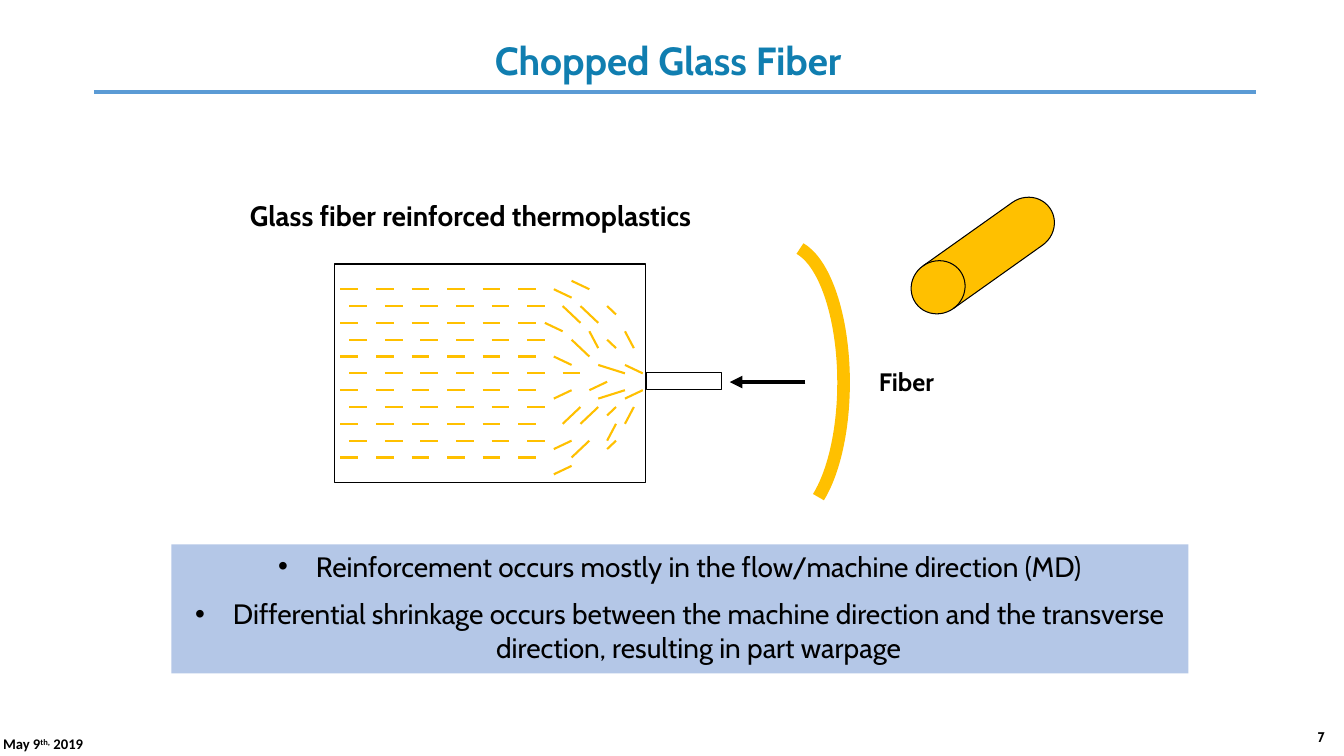
from lxml import etree
from pptx import Presentation
from pptx.dml.color import RGBColor
from pptx.enum import shapes, text
from pptx.oxml import ns
from pptx.util import Pt

# Content
TITLE = "Chopped Glass Fiber"
SUBTITLE = "Glass fiber reinforced thermoplastics"
POINTS = [
    "Reinforcement occurs mostly in the flow/machine direction (MD)",
    "Differential shrinkage occurs between the machine direction and the "
    "transverse direction, resulting in part warpage",
]
DATE = [("May 9", 0), ("th,", 30000), (" 2019", 0)]

COLORS = {"title": "107EB0", "rule": "5B9BD5", "panel": "B4C7E7",
          "fiber": "FFC000", "ink": "000000", "paper": "FFFFFF"}

# Fiber grid: origin and unit in points; aligned rows alternate by one unit
GRID_X, GRID_Y, UNIT_X, UNIT_Y = 243.2, 206.6, 6.35, 6.01
ROWS, DASHES, DASH, STEP = 11, 6, 2, 4

# Turning fibers near the gate, in grid units: x1, y1, x2, y2
TURNING = [
    (24, 0, 26, 1), (27, 2, 29, 4), (30, 6, 31, 7), (32, 9, 34, 10),
    (32, 5, 33, 7), (30, 2, 31, 3), (26, -1, 28, 0), (25, 2, 27, 4),
    (28, 5, 29, 7), (23, 4, 25, 5), (26, 6, 28, 8), (29, 9, 32, 10),
    (25, 10, 27, 10), (24, 8, 26, 9), (24, 13, 26, 12), (27, 16, 29, 14),
    (30, 19, 31, 18), (32, 13, 34, 12), (32, 16, 33, 14), (30, 15, 31, 14),
    (28, 12, 30, 11), (25, 16, 27, 14), (30, 18, 31, 16), (24, 19, 26, 18),
    (26, 20, 28, 18), (29, 13, 32, 12), (24, 22, 26, 21),
]

ALIGN, ANCHOR = text.PP_ALIGN, text.MSO_ANCHOR
SHAPE = shapes.MSO_SHAPE


def rgb(name):
    return RGBColor.from_string(COLORS[name])


def set_all(target, values):
    for key, value in values.items():
        setattr(target, key, value)


def add_run(p, words, size, color="ink", bold=True, font="Cabin"):
    r = p.add_run()
    r.text = words
    set_all(r.font, {"name": font, "size": Pt(size), "bold": bold})
    r.font.color.rgb = rgb(color)
    return r


def add_line(parent, x1, y1, x2, y2, color, width):
    line = parent.add_connector(shapes.MSO_CONNECTOR.STRAIGHT,
                                Pt(x1), Pt(y1), Pt(x2), Pt(y2))
    line.line.color.rgb = rgb(color)
    line.line.width = Pt(width)
    etree.SubElement(line._element.spPr, ns.qn("a:effectLst"))
    return line


def add_shape(kind, box, fill=None, line=None, width=0.75):
    sp = s.shapes.add_shape(kind, *map(Pt, box))
    sp.shadow.inherit = False
    if fill:
        sp.fill.solid()
        sp.fill.fore_color.rgb = rgb(fill)
    else:
        sp.fill.background()
    if line:
        sp.line.color.rgb = rgb(line)
        sp.line.width = Pt(width)
    else:
        sp.line.fill.background()
    return sp


def add_text(box, align=ALIGN.LEFT, anchor=ANCHOR.TOP, **margins):
    tf = s.shapes.add_textbox(*map(Pt, box)).text_frame
    set_all(tf, {"word_wrap": True, "vertical_anchor": anchor, **margins})
    tf.paragraphs[0].alignment = align
    return tf.paragraphs[0]


prs = Presentation()
prs.slide_width, prs.slide_height = Pt(960), Pt(540)
s = prs.slides.add_slide(prs.slide_layouts[5])

# Title and rule
title = s.shapes.title
set_all(title, {"left": Pt(180.2), "top": Pt(22.3),
                "width": Pt(594), "height": Pt(41)})
set_all(title.text_frame, {"vertical_anchor": ANCHOR.MIDDLE, "word_wrap": True,
                           "auto_size": text.MSO_AUTO_SIZE.NONE})
p = title.text_frame.paragraphs[0]
p.alignment = ALIGN.CENTER
add_run(p, TITLE, 28, "title")
add_line(s.shapes, 67, 65.5, 897, 65.5, "rule", 3)

# Mold, gate and flow arrow
add_shape(SHAPE.RECTANGLE, (461.5, 266.4, 54, 12.2), "paper", "ink")
add_shape(SHAPE.RECTANGLE, (239.3, 188.6, 222, 156.2), None, "ink")
arrow = add_line(s.shapes, 575.3, 272.9, 521.3, 272.9, "ink", 3)
etree.SubElement(arrow.line._get_or_add_ln(), ns.qn("a:tailEnd"), type="triangle")

# Fibers: aligned rows, then those turning at the gate
aligned = [(row % 2 + STEP * i, 2 * row, row % 2 + STEP * i + DASH, 2 * row)
           for row in range(ROWS) for i in range(DASHES)]
fibers = s.shapes.add_group_shape()
for x1, y1, x2, y2 in aligned + TURNING:
    add_line(fibers.shapes, GRID_X + x1 * UNIT_X, GRID_Y + y1 * UNIT_Y,
             GRID_X + x2 * UNIT_X, GRID_Y + y2 * UNIT_Y, "fiber", 1.5)

# Single fiber: cylinder, curved strand and label
cylinder = add_shape(SHAPE.FLOWCHART_MAGNETIC_DISK, (683.3, 123.8, 37.4, 117.4),
                     "fiber", "ink")
cylinder.rotation = 234.6
strand = add_shape(SHAPE.ARC, (522, 175, 80.6, 196.6), None, "fiber", 9)
strand.adjustments[0], strand.adjustments[1] = 165.27, 44.84
add_run(add_text((610, 252, 75, 41), ALIGN.CENTER, ANCHOR.MIDDLE), "Fiber", 18)

# Subtitle
add_run(add_text((171.4, 138.2, 588, 31.7)), SUBTITLE, 20)

# Bullet panel
panel = add_shape(SHAPE.RECTANGLE, (122.4, 388.8, 726.5, 92.2), "panel")
tf = panel.text_frame
set_all(tf, {"word_wrap": True, "vertical_anchor": ANCHOR.TOP})
for i, point in enumerate(POINTS):
    p = tf.add_paragraph() if i else tf.paragraphs[0]
    pPr = p._p.get_or_add_pPr()
    set_all(p, {"alignment": ALIGN.CENTER, "space_before": Pt(10 if i else 0)})
    pPr.set("marL", str(Pt(27)))
    pPr.set("indent", str(-Pt(27)))
    etree.SubElement(pPr, ns.qn("a:buFont"), typeface="Arial")
    etree.SubElement(pPr, ns.qn("a:buChar"), char="•")
    add_run(p, point, 20, bold=False)

# Footer
p = add_text((2.2, 521.3, 110, 16.6), margin_left=0, margin_bottom=0)
for words, baseline in DATE:
    r = add_run(p, words, 10.5, font="Calibri")
    if baseline:
        r._r.get_or_add_rPr().set("baseline", str(baseline))
add_run(add_text((913, 518.4, 40.3, 16.6), ALIGN.RIGHT, ANCHOR.MIDDLE), "7", 10)

prs.save("out.pptx")
